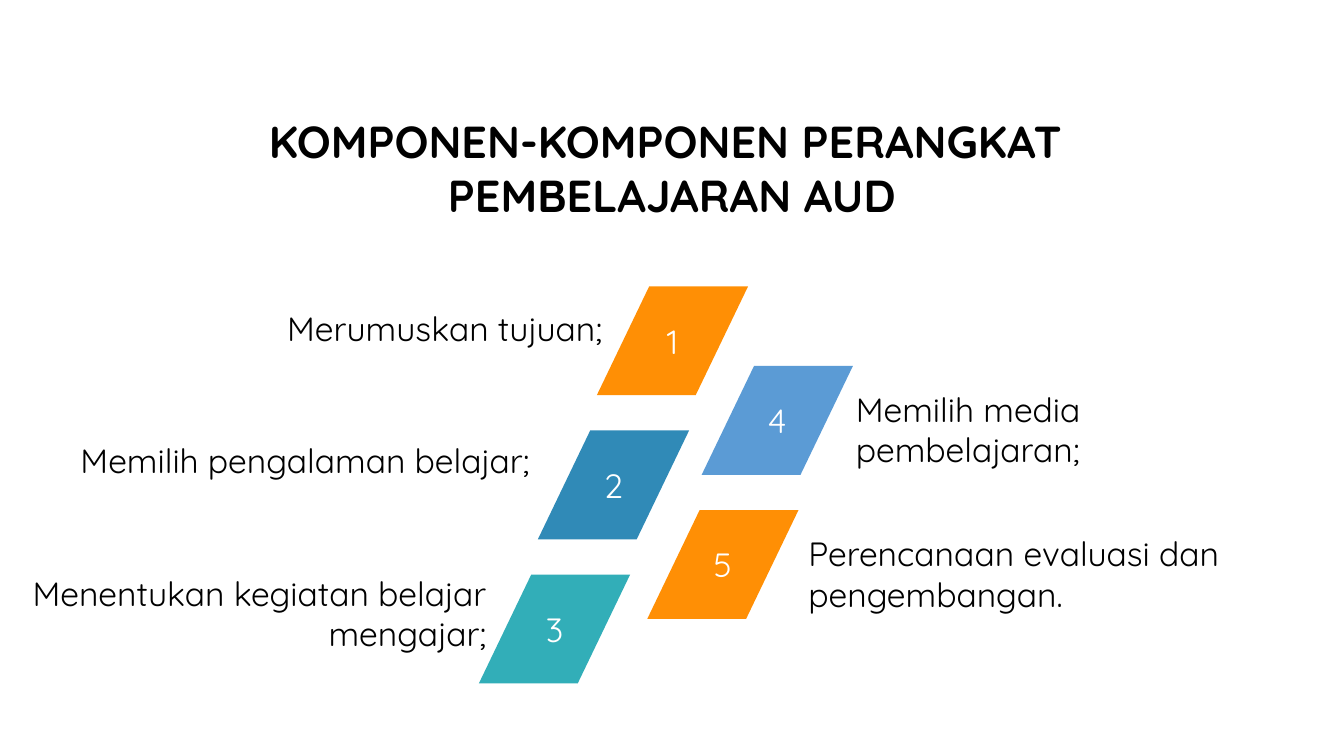
from dataclasses import dataclass

from pptx import Presentation
from pptx.dml.color import RGBColor
from pptx.enum.shapes import MSO_SHAPE
from pptx.enum.text import MSO_ANCHOR, PP_ALIGN
from pptx.util import Inches, Pt

PARALLELOGRAM = MSO_SHAPE.PARALLELOGRAM
MIDDLE = MSO_ANCHOR.MIDDLE
LEFT, CENTER, RIGHT = PP_ALIGN.LEFT, PP_ALIGN.CENTER, PP_ALIGN.RIGHT

FONT = "Quicksand"
BLACK, WHITE = "000000", "FFFFFF"
ORANGE, BLUE, TEAL, SKY = "FF8F05", "308AB7", "32AEB8", "5B9BD5"
TILE_WIDTH, TILE_HEIGHT, TILE_SLANT = 1.5, 1.08, 0.481
ROW_STEP = 1.43


@dataclass
class Label:
    text: str
    left: float
    top: float
    width: float
    height: float
    align: PP_ALIGN = LEFT
    wrap: bool = True
    size: int = 24
    bold: bool = False


@dataclass
class Component:
    color: str
    label: Label


@dataclass
class Column:
    left: float
    top: float
    row_shift: float
    components: list[Component]


TITLE = Label("KOMPONEN-KOMPONEN PERANGKAT \nPEMBELAJARAN AUD",
              2.43, 1.08, 8.47, 1.18, CENTER, False, 32, True)

COLUMNS = [
    Column(5.92, 2.84, -0.585, [
        Component(ORANGE, Label("Merumuskan tujuan;", 2.75, 3.01, 3.5, 0.5, wrap=False)),
        Component(BLUE, Label("Memilih pengalaman belajar;", 0.7, 4.32, 5.03, 0.5, wrap=False)),
        Component(TEAL, Label("Menentukan kegiatan belajar mengajar;",
                              0, 5.63, 4.92, 0.91, RIGHT)),
    ]),
    Column(6.96, 3.63, -0.54, [
        Component(SKY, Label("Memilih media pembelajaran;", 8.39, 3.81, 4.29, 0.91)),
        Component(ORANGE, Label("Perencanaan evaluasi dan pengembangan.",
                                7.92, 5.24, 5.41, 0.91)),
    ]),
]


def rgb(color: str) -> RGBColor:
    return RGBColor.from_string(color)


def format_text(frame, color: str, align: PP_ALIGN, size: int = 24, bold: bool = False) -> None:
    for paragraph in frame.paragraphs:
        paragraph.alignment = align
        for run in paragraph.runs:
            run.font.name = FONT
            run.font.size = Pt(size)
            run.font.bold = bold
            run.font.color.rgb = rgb(color)


def add_label(slide, label: Label) -> None:
    box = slide.shapes.add_textbox(Inches(label.left), Inches(label.top),
                                   Inches(label.width), Inches(label.height))
    frame = box.text_frame
    frame.word_wrap = label.wrap
    frame.text = label.text
    format_text(frame, BLACK, label.align, label.size, label.bold)


def add_tile(slide, number: int, left: float, top: float, color: str) -> None:
    tile = slide.shapes.add_shape(PARALLELOGRAM, Inches(left), Inches(top),
                                  Inches(TILE_WIDTH), Inches(TILE_HEIGHT))
    tile.adjustments[0] = TILE_SLANT
    tile.shadow.inherit = False
    tile.fill.solid()
    tile.fill.fore_color.rgb = rgb(color)
    tile.line.fill.background()
    tile.text_frame.vertical_anchor = MIDDLE
    tile.text_frame.text = str(number)
    format_text(tile.text_frame, WHITE, CENTER)


def main() -> None:
    deck = Presentation()
    deck.slide_width, deck.slide_height = Inches(13.33), Inches(7.5)
    slide = deck.slides.add_slide(deck.slide_layouts[6])

    # Title
    add_label(slide, TITLE)

    # Numbered components, in two slanted columns
    number = 0
    for column in COLUMNS:
        for row, component in enumerate(column.components):
            number += 1
            add_tile(slide, number, column.left + row * column.row_shift,
                     column.top + row * ROW_STEP, component.color)
            add_label(slide, component.label)

    deck.save("out.pptx")


if __name__ == "__main__":
    main()
